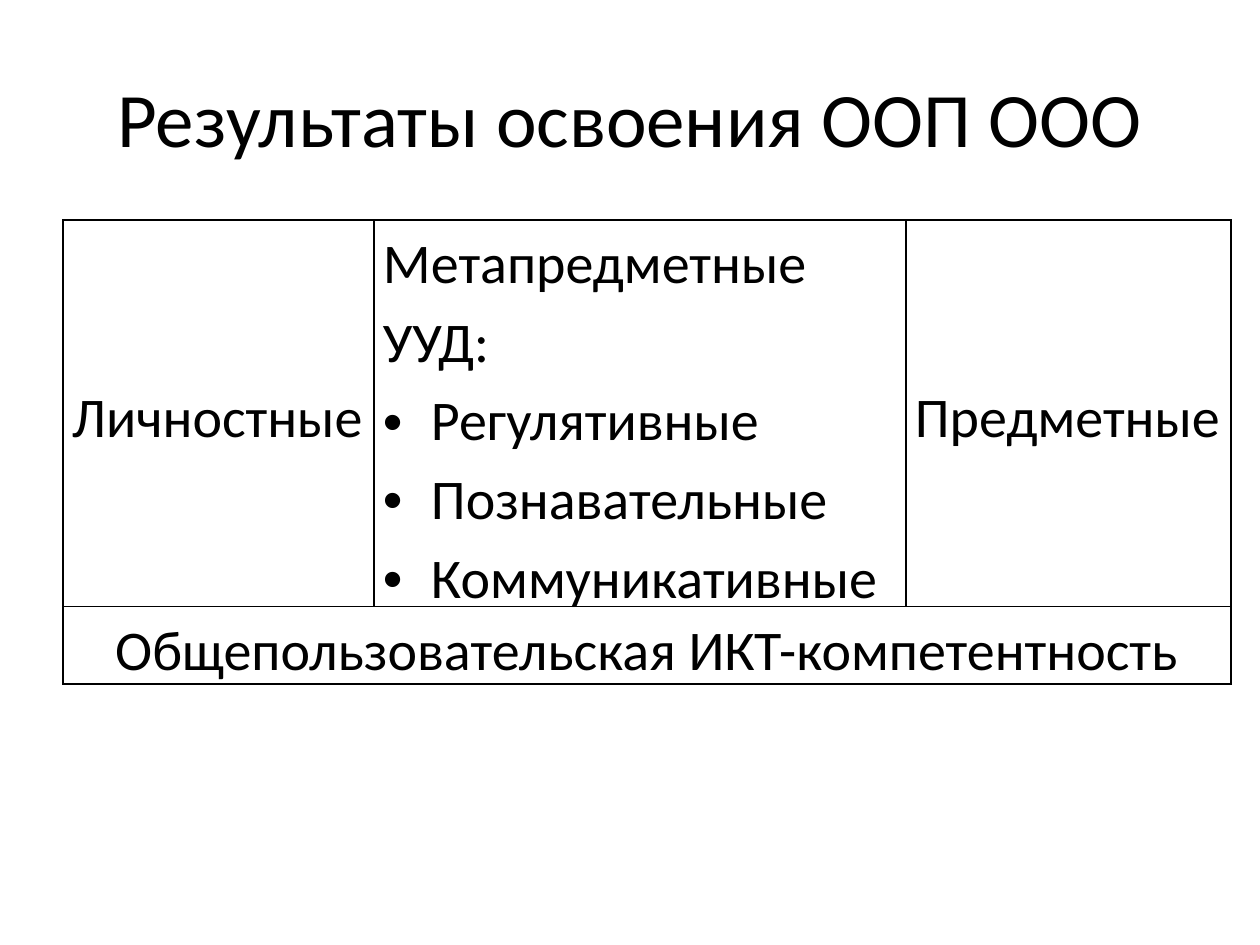
import lxml.etree
import pptx
import pptx.dml.color
import pptx.enum.text
import pptx.oxml.ns
import pptx.util

SCALE = 914400 / 126
ALIGN = pptx.enum.text.PP_ALIGN
MIDDLE = pptx.enum.text.MSO_ANCHOR.MIDDLE


def px(length):
    """Turn pixels into EMU."""
    return pptx.util.Emu(round(length * SCALE))


def color(value):
    """Turn a hex string into a colour."""
    return pptx.dml.color.RGBColor.from_string(value)


def add_node(parent, tag, **attributes):
    """Append a DrawingML element to its parent."""
    return lxml.etree.SubElement(parent, pptx.oxml.ns.qn(tag), attributes)


def write(para, text, size, font="Calibri", ink="000000", align=ALIGN.LEFT, spacing=1.0, indent=0):
    """Write formatted text into a paragraph, with a bullet if it is indented."""
    para.alignment = align
    para.line_spacing = spacing
    span = para.add_run()
    span.text = text
    span.font.size = pptx.util.Pt(size)
    span.font.name = font
    span.font.color.rgb = color(ink)
    if indent:
        properties = para._p.get_or_add_pPr()
        properties.set("marL", str(px(indent)))
        properties.set("indent", str(-px(indent)))
        add_node(properties, "a:buFont", typeface="Arial")
        add_node(properties, "a:buChar", char="•")


class SlideBuilder:
    """Holds the style and the current slide."""

    title_size = 44
    cell_size = 32
    cell_spacing = 1.15
    bullet_indent = 48
    cell_margin = 9
    border = "000000"

    def __init__(self, deck):
        self.slide = deck.slides.add_slide(deck.slide_layouts[6])

    def title(self, text, left, top, width, height):
        """Add the centred slide title."""
        box = self.slide.shapes.add_textbox(px(left), px(top), px(width), px(height))
        frame = box.text_frame
        frame.word_wrap = True
        frame.vertical_anchor = MIDDLE
        write(frame.paragraphs[0], text, self.title_size, align=ALIGN.CENTER)

    def table(self, left, top, widths, heights):
        """Add an unfilled table with thin borders."""
        frame = self.slide.shapes.add_table(
            len(heights), len(widths), px(left), px(top), px(sum(widths)), px(sum(heights)))
        table = frame.table
        table.first_row = table.horz_banding = False
        for column, width in zip(table.columns, widths):
            column.width = px(width)
        for row, height in zip(table.rows, heights):
            row.height = px(height)
        for cell in table.iter_cells():
            self.style_cell(cell)
        return table

    def style_cell(self, cell):
        """Set the margins, anchor, borders and fill of a cell."""
        cell.margin_left = cell.margin_right = px(self.cell_margin)
        cell.margin_top = cell.margin_bottom = 0
        cell.vertical_anchor = MIDDLE
        properties = cell._tc.get_or_add_tcPr()
        for side in ("L", "R", "T", "B"):
            line = add_node(properties, f"a:ln{side}", w=str(pptx.util.Pt(1)))
            add_node(add_node(line, "a:solidFill"), "a:srgbClr", val=self.border)
        cell.fill.background()

    def fill_cell(self, cell, lines, bullets=(), align=ALIGN.LEFT):
        """Write plain lines and then bulleted lines into a cell."""
        frame = cell.text_frame
        for index, text in enumerate([*lines, *bullets]):
            para = frame.add_paragraph() if index else frame.paragraphs[0]
            indent = self.bullet_indent if index >= len(lines) else 0
            write(para, text, self.cell_size, align=align, spacing=self.cell_spacing, indent=indent)


def main():
    """Build the slide and save it."""
    deck = pptx.Presentation()
    deck.slide_width, deck.slide_height = px(1260), px(945)
    builder = SlideBuilder(deck)
    builder.title("Результаты освоения ООП ООО", 63, 38, 1134, 158)

    results = builder.table(63, 220, widths=(311, 532, 325), heights=(341, 68))
    builder.fill_cell(results.cell(0, 0), ["Личностные"])
    builder.fill_cell(
        results.cell(0, 1),
        ["Метапредметные", "УУД:"],
        bullets=["Регулятивные", "Познавательные", "Коммуникативные"])
    builder.fill_cell(results.cell(0, 2), ["Предметные"])
    results.cell(1, 0).merge(results.cell(1, 2))
    builder.fill_cell(
        results.cell(1, 0), ["Общепользовательская ИКТ-компетентность"], align=ALIGN.CENTER)
    deck.save("out.pptx")


if __name__ == "__main__":
    main()
